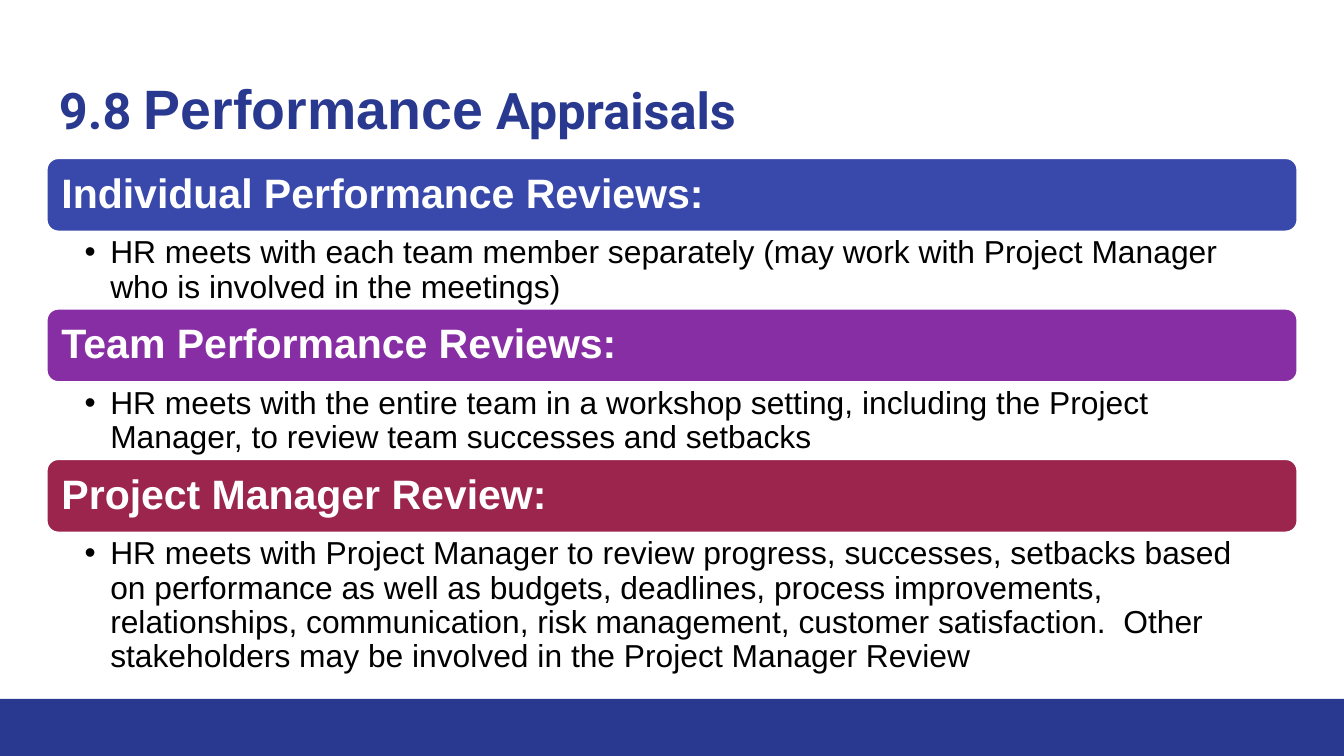
from dataclasses import dataclass

from lxml import etree
from pptx import Presentation
from pptx.dml.color import RGBColor
from pptx.enum.shapes import MSO_SHAPE
from pptx.enum.text import MSO_ANCHOR, PP_ALIGN
from pptx.oxml.ns import qn
from pptx.util import Inches, Pt

RECT, ROUND_RECT = MSO_SHAPE.RECTANGLE, MSO_SHAPE.ROUNDED_RECTANGLE
TOP, MIDDLE = MSO_ANCHOR.TOP, MSO_ANCHOR.MIDDLE
LEFT = PP_ALIGN.LEFT


@dataclass(frozen=True)
class Theme:
    navy: str = "2A3990"
    white: str = "FFFFFF"
    black: str = "000000"
    blue: str = "3949AB"
    purple: str = "882EA4"
    crimson: str = "9C254D"
    body_font: str = "Arial"
    title_font: str = "Roboto"
    title_size: float = 27
    title_big_size: float = 29.7
    heading_size: float = 22
    body_size: float = 17


THEME = Theme()
MARGIN, WIDTH = 0.34, 9.32
HEADER_H = 0.56

# Heading, colour, detail text, detail height
REVIEWS = [
    ("Individual Performance Reviews:", THEME.blue,
     "HR meets with each team member separately (may work with Project Manager "
     "who is involved in the meetings)", 0.56),
    ("Team Performance Reviews:", THEME.purple,
     "HR meets with the entire team in a workshop setting, including the Project "
     "Manager, to review team successes and setbacks", 0.56),
    ("Project Manager Review:", THEME.crimson,
     "HR meets with Project Manager to review progress, successes, setbacks based "
     "on performance as well as budgets, deadlines, process improvements, "
     "relationships, communication, risk management, customer satisfaction.  Other "
     "stakeholders may be involved in the Project Manager Review", 1.05),
]


def style_run(r, size, color, font=THEME.body_font, bold=False):
    r.font.name = font
    r.font.size = Pt(size)
    r.font.bold = bold
    r.font.color.rgb = RGBColor.from_string(color)


def set_frame(tf, insets, anchor=TOP):
    tf.word_wrap = True
    tf.vertical_anchor = anchor
    (tf.margin_left, tf.margin_top,
     tf.margin_right, tf.margin_bottom) = [Inches(i) for i in insets]


def add_block(s, preset, box, color):
    sp = s.shapes.add_shape(preset, *[Inches(v) for v in box])
    sp.shadow.inherit = False
    sp.fill.solid()
    sp.fill.fore_color.rgb = RGBColor.from_string(color)
    sp.line.fill.background()
    return sp


def add_bullet(p, indent, color):
    pPr = p._p.get_or_add_pPr()
    pPr.set("marL", str(Inches(indent)))
    pPr.set("indent", str(Inches(-indent)))
    clr = etree.SubElement(pPr, qn("a:buClr"))
    etree.SubElement(clr, qn("a:srgbClr"), val=color)
    etree.SubElement(pPr, qn("a:buFont"), typeface=THEME.body_font)
    etree.SubElement(pPr, qn("a:buChar"), char="•")


def add_title(s, box):
    tf = s.shapes.add_textbox(*[Inches(v) for v in box]).text_frame
    set_frame(tf, (0.1,) * 4)
    p = tf.paragraphs[0]
    for text, size, font in [
        ("9.8 ", THEME.title_size, THEME.title_font),
        ("Performance", THEME.title_big_size, THEME.body_font),
        (" Appraisals", THEME.title_size, THEME.title_font),
    ]:
        r = p.add_run()
        r.text = text
        style_run(r, size, THEME.navy, font, bold=True)


def add_review(s, box, heading, color, detail):
    left, top, width, height = box

    # Coloured heading bar
    bar = add_block(s, ROUND_RECT, (left, top, width, HEADER_H), color)
    bar.line.color.rgb = RGBColor.from_string(THEME.white)
    bar.line.width = Pt(2)
    set_frame(bar.text_frame, (0.09,) * 4, MIDDLE)
    p = bar.text_frame.paragraphs[0]
    p.text = heading
    p.alignment = LEFT
    p.line_spacing = 0.9
    style_run(p.runs[0], THEME.heading_size, THEME.white, bold=True)

    # Bulleted detail below the bar
    detail_box = (left, top + HEADER_H, width, height - HEADER_H)
    tf = s.shapes.add_textbox(*[Inches(v) for v in detail_box]).text_frame
    set_frame(tf, (0.29, 0.03, 0.17, 0.03))
    p = tf.paragraphs[0]
    p.text = detail
    add_bullet(p, 0.19, THEME.black)
    p.line_spacing = 0.9
    style_run(p.runs[0], THEME.body_size, THEME.black)


def add_reviews(s, left, top, width):
    for heading, color, detail, detail_h in REVIEWS:
        height = HEADER_H + detail_h
        add_review(s, (left, top, width, height), heading, color, detail)
        top += height


def main():
    prs = Presentation()
    prs.slide_width = Inches(10)
    prs.slide_height = prs.slide_width * 9 // 16
    s = prs.slides.add_slide(prs.slide_layouts[6])
    add_block(s, RECT, (0, 5.2, 10, 0.43), THEME.navy)  # footer band
    add_title(s, (MARGIN, 0.45, WIDTH, 0.66))
    add_reviews(s, MARGIN, 1.17, WIDTH)
    prs.save("out.pptx")


if __name__ == "__main__":
    main()
